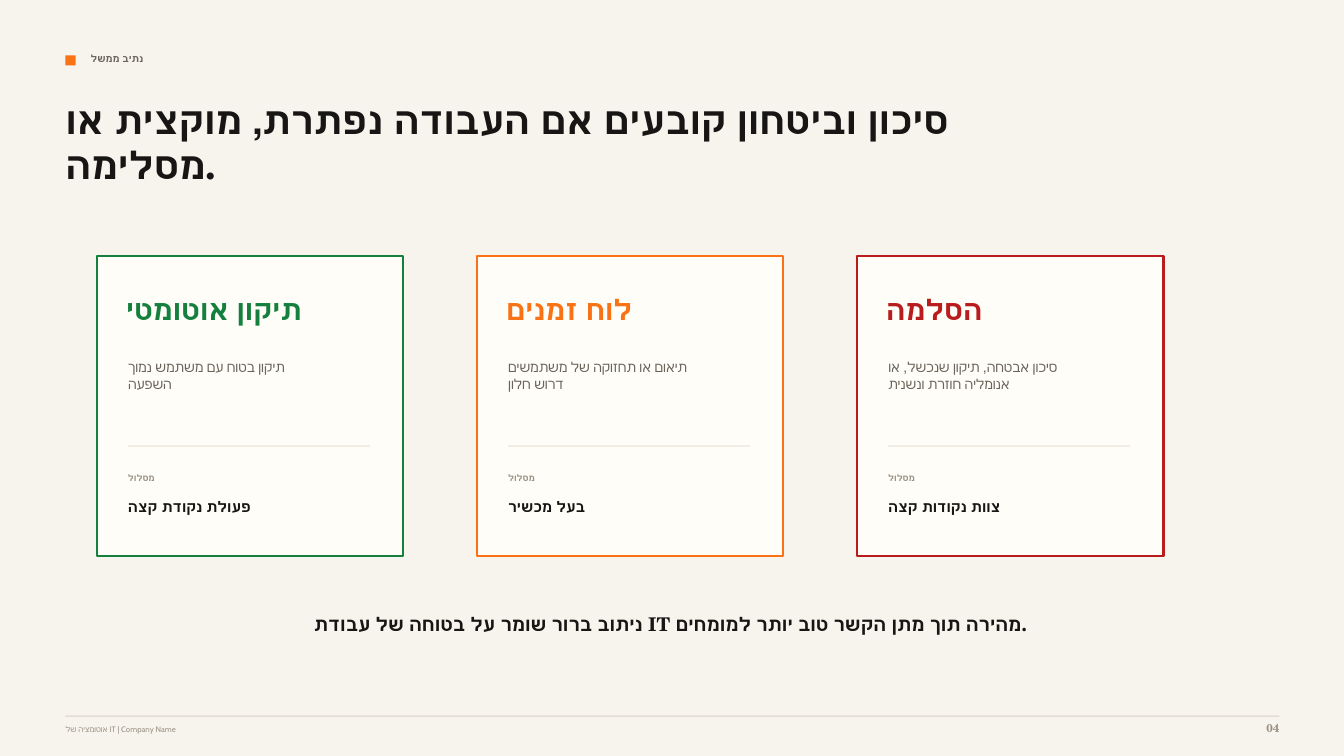
from dataclasses import dataclass

from pptx import Presentation
from pptx.dml.color import RGBColor
from pptx.enum.shapes import MSO_SHAPE
from pptx.enum.text import PP_ALIGN
from pptx.util import Inches, Pt

RECTANGLE = MSO_SHAPE.RECTANGLE
LEFT, CENTER, RIGHT = PP_ALIGN.LEFT, PP_ALIGN.CENTER, PP_ALIGN.RIGHT


@dataclass(frozen=True)
class Style:
    font: str
    size: float
    color: str
    bold: bool = True


class Theme:
    serif, sans = "TeX Gyre Schola", "Cabin"
    paper, card, rule = "F7F4EE", "FFFDF8", "D9D0C3"
    ink, gray, muted = "171614", "69635A", "9A9184"
    green, orange, red = "15803D", "F97316", "B91C1C"
    card_title_size = 20.2

    section = Style(sans, 7.1, gray)
    title = Style(serif, 27, ink)
    detail = Style(sans, 9.8, gray, False)
    label = Style(sans, 6.4, muted)
    route = Style(sans, 10.5, ink)
    closing = Style(serif, 13.5, ink)
    footer = Style(sans, 5.6, muted, False)
    number = Style(serif, 8.2, muted)


MARGIN = 0.65
CARD_LEFT, CARD_TOP, CARD_STEP = 0.96, 2.54, 3.77
ROUTE_LABEL = "מסלול"
CARDS = [
    (Theme.green, "תיקון אוטומטי",
     "תיקון בטוח עם משתמש נמוך\nהשפעה", "פעולת נקודת קצה"),
    (Theme.orange, "לוח זמנים",
     "תיאום או תחזוקה של משתמשים\nדרוש חלון", "בעל מכשיר"),
    (Theme.red, "הסלמה",
     "סיכון אבטחה, תיקון שנכשל, או\nאנומליה חוזרת ונשנית", "צוות נקודות קצה"),
]


def add_block(page, left, top, width, height, fill, line=None):
    block = page.shapes.add_shape(
        RECTANGLE, Inches(left), Inches(top), Inches(width), Inches(height))
    block.shadow.inherit = False
    block.fill.solid()
    block.fill.fore_color.rgb = RGBColor.from_string(fill)
    if line:
        block.line.color.rgb = RGBColor.from_string(line)
        block.line.width = Pt(1.5)
    else:
        block.line.fill.background()


def add_rule(page, left, top, width):
    add_block(page, left, top, width, 0.01, Theme.rule)


def add_text(page, left, top, width, height, text, style, align=LEFT):
    box = page.shapes.add_textbox(
        Inches(left), Inches(top), Inches(width), Inches(height))
    frame = box.text_frame
    frame.word_wrap = True
    frame.margin_left = frame.margin_right = 0
    frame.margin_top = frame.margin_bottom = 0
    frame.text = text
    for para in frame.paragraphs:
        para.alignment = align
        for span in para.runs:
            span.font.name = style.font
            span.font.size = Pt(style.size)
            span.font.bold = style.bold
            span.font.color.rgb = RGBColor.from_string(style.color)


def add_card(page, left, color, heading, detail, route):
    heading_style = Style(Theme.serif, Theme.card_title_size, color)
    inner = left + 0.31
    add_block(page, left, CARD_TOP, 3.04, 2.98, Theme.card, color)
    add_text(page, left + 0.29, CARD_TOP + 0.36, 2.29, 0.35, heading, heading_style)
    add_text(page, inner, CARD_TOP + 1.02, 2.33, 0.52, detail, Theme.detail)
    add_rule(page, inner, CARD_TOP + 1.88, 2.4)
    add_text(page, inner, CARD_TOP + 2.15, 1.67, 0.15, ROUTE_LABEL, Theme.label)
    add_text(page, inner, CARD_TOP + 2.4, 2.29, 0.23, route, Theme.route)


def main():
    deck = Presentation()
    deck.slide_width, deck.slide_height = Inches(13.33), Inches(7.5)
    page = deck.slides.add_slide(deck.slide_layouts[6])

    # Background and heading
    add_block(page, 0, 0, 13.33, 7.5, Theme.paper)
    add_block(page, MARGIN, 0.55, 0.1, 0.1, Theme.orange)
    add_text(page, 0.9, 0.52, 6.46, 0.19, "נתיב ממשל", Theme.section)
    add_text(page, MARGIN, 0.96, 9.38, 1.02,
             "סיכון וביטחון קובעים אם העבודה נפתרת, מוקצית או מסלימה.", Theme.title)

    # Three outcome cards
    for index, card in enumerate(CARDS):
        add_card(page, CARD_LEFT + index * CARD_STEP, *card)

    # Closing statement
    add_text(page, 1.96, 6.08, 9.38, 0.29,
             "ניתוב ברור שומר על בטוחה של עבודת IT "
             "מהירה תוך מתן הקשר טוב יותר למומחים.", Theme.closing, CENTER)

    # Footer
    add_rule(page, MARGIN, 7.1, 12.04)
    add_text(page, MARGIN, 7.19, 7.92, 0.15,
             "אוטומציה של IT | Company Name", Theme.footer)
    add_text(page, 12.19, 7.15, 0.5, 0.19, "04", Theme.number, RIGHT)

    deck.save("out.pptx")


if __name__ == "__main__":
    main()
